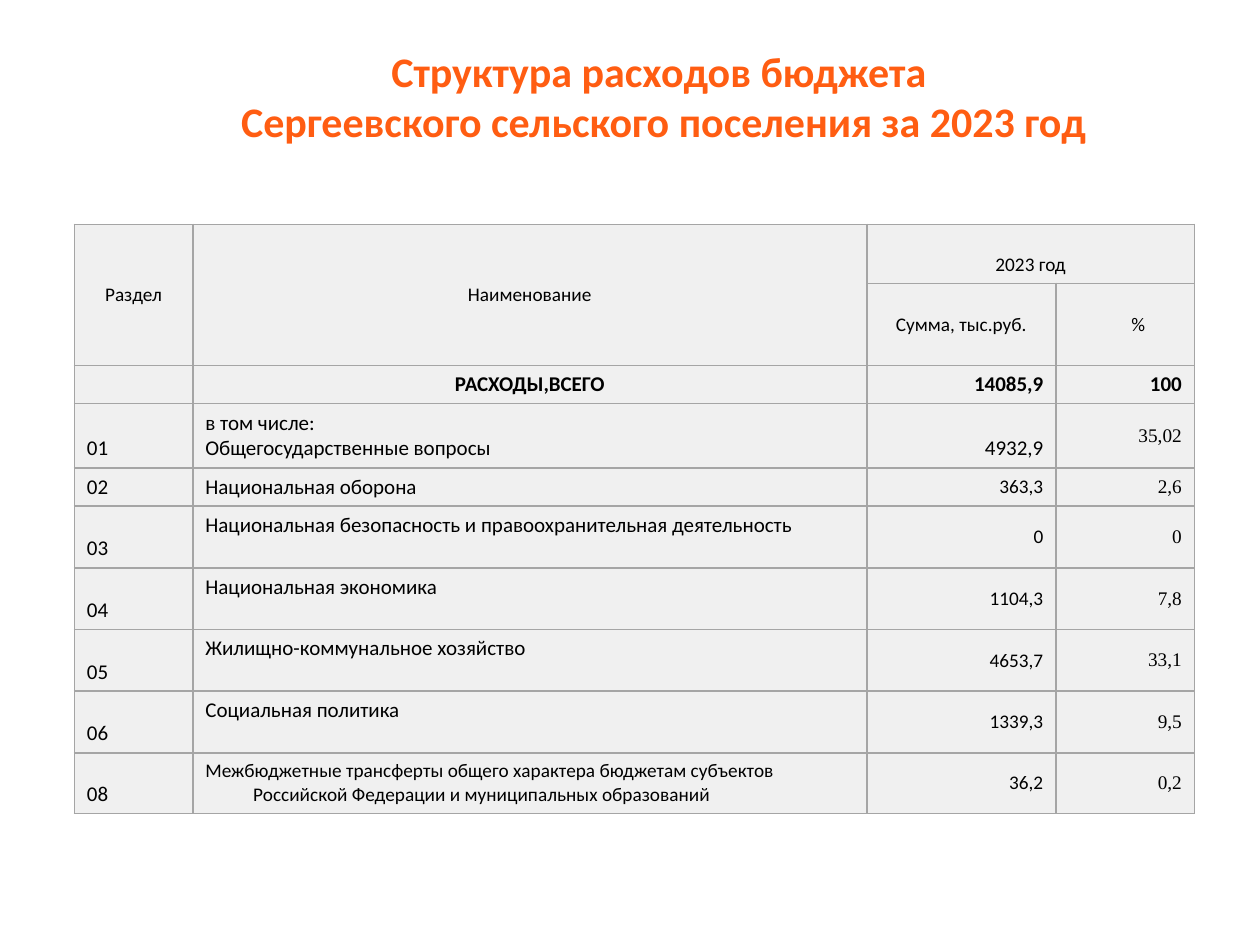
from dataclasses import dataclass

from lxml.etree import SubElement
from pptx import Presentation
from pptx.dml.color import RGBColor
from pptx.enum.text import MSO_ANCHOR as Anchor, PP_ALIGN as Align
from pptx.oxml.ns import qn
from pptx.util import Inches, Pt

COLORS = {"title": "FF5D12", "text": "000000", "fill": "F0F0F0", "border": "A5A5A5"}
COLUMN_WIDTHS = [0.94, 5.35, 1.5, 1.1]
ROW_HEIGHTS = [0.47, 0.65, 0.3, 0.51, 0.3] + [0.49] * 4 + [0.48]
FIRST_SECTION_ROW = 3
HANGING = 0.38


@dataclass
class CellStyle:
    align: Align = Align.LEFT
    anchor: Anchor = Anchor.MIDDLE
    size: int = 12
    bold: bool = False
    font: str = "Calibri"
    margin: float = HANGING


@dataclass
class Section:
    code: str
    name: str
    amount: str
    percent: str
    name_anchor: Anchor = Anchor.TOP
    name_size: int = 12
    amount_size: int = 11
    amount_anchor: Anchor = Anchor.MIDDLE


HEADER = CellStyle(Align.CENTER, size=11)
TOTAL_NAME = CellStyle(Align.CENTER, Anchor.BOTTOM, bold=True)
TOTAL_VALUE = CellStyle(Align.RIGHT, Anchor.BOTTOM, bold=True)
CODE = CellStyle(anchor=Anchor.BOTTOM)
PERCENT = CellStyle(Align.RIGHT, size=11, font="Times New Roman")

HEADER_CELLS = [
    (0, 0, "Раздел", HEADER),
    (0, 1, "Наименование", HEADER),
    (0, 2, "2023 год", CellStyle(Align.CENTER, Anchor.BOTTOM, 11)),
    (1, 2, "Сумма, тыс.руб.", HEADER),
    (1, 3, "%", CellStyle(size=11, margin=0.88)),
    (2, 0, "", CODE),
    (2, 1, "РАСХОДЫ,ВСЕГО", TOTAL_NAME),
    (2, 2, "14085,9", TOTAL_VALUE),
    (2, 3, "100", TOTAL_VALUE),
]
SECTIONS = [
    Section("01", "в том числе:\nОбщегосударственные вопросы", "4932,9", "35,02",
            Anchor.MIDDLE, amount_size=12, amount_anchor=Anchor.BOTTOM),
    Section("02", "Национальная оборона", "363,3", "2,6", Anchor.MIDDLE),
    Section("03", "Национальная безопасность и правоохранительная деятельность", "0", "0"),
    Section("04", "Национальная экономика", "1104,3", "7,8"),
    Section("05", "Жилищно-коммунальное хозяйство", "4653,7", "33,1"),
    Section("06", "Социальная политика", "1339,3", "9,5"),
    Section("08", "Межбюджетные трансферты общего характера бюджетам субъектов "
            "Российской Федерации и муниципальных образований", "36,2", "0,2",
            Anchor.MIDDLE, name_size=11),
]


def format_runs(paragraph, font: str, size: int, bold: bool, color: str) -> None:
    for run in paragraph.runs:
        run.font.name = font
        run.font.size = Pt(size)
        run.font.bold = bold
        run.font.color.rgb = RGBColor.from_string(COLORS[color])


def style_cell_box(cell) -> None:
    """Give the cell its four borders and its fill."""
    properties = cell._tc.get_or_add_tcPr()
    for side in ("a:lnL", "a:lnR", "a:lnT", "a:lnB"):
        line = SubElement(properties, qn(side), w=str(Pt(1)))
        solid = SubElement(line, qn("a:solidFill"))
        SubElement(solid, qn("a:srgbClr"), val=COLORS["border"])
    cell.fill.solid()
    cell.fill.fore_color.rgb = RGBColor.from_string(COLORS["fill"])


def write_cell(cell, text: str, style: CellStyle) -> None:
    cell.text_frame.text = text
    cell.vertical_anchor = style.anchor
    for paragraph in cell.text_frame.paragraphs:
        paragraph.alignment = style.align
        indents = paragraph._p.get_or_add_pPr()
        indents.set("marL", str(Inches(style.margin)))
        indents.set("indent", str(Inches(-HANGING)))
        format_runs(paragraph, style.font, style.size, style.bold, "text")
        SubElement(paragraph._p, qn("a:endParaRPr"), sz=str(style.size * 100))


def add_title(slide) -> None:
    title = slide.shapes.title
    title.left, title.top = Inches(0.98), Inches(0.28)
    title.width, title.height = Inches(8.5), Inches(1.25)
    frame = title.text_frame
    frame.text = "Структура расходов бюджета\v Сергеевского сельского поселения за 2023 год"
    frame.word_wrap = True
    frame.vertical_anchor = Anchor.TOP
    frame.margin_top = Inches(0.08)
    heading = frame.paragraphs[0]
    heading.alignment = Align.CENTER
    format_runs(heading, "Calibri", 24, True, "title")


def add_expense_table(slide) -> None:
    table = slide.shapes.add_table(
        len(ROW_HEIGHTS), len(COLUMN_WIDTHS), Inches(0.59), Inches(1.78),
        Inches(sum(COLUMN_WIDTHS)), Inches(sum(ROW_HEIGHTS))).table
    table.first_row = table.horz_banding = False
    for column, width in zip(table.columns, COLUMN_WIDTHS):
        column.width = Inches(width)
    for row, height in zip(table.rows, ROW_HEIGHTS):
        row.height = Inches(height)
    for cell in table.iter_cells():
        style_cell_box(cell)
    for start, end in (((0, 0), (1, 0)), ((0, 1), (1, 1)), ((0, 2), (0, 3))):
        table.cell(*start).merge(table.cell(*end))

    for row, column, text, style in HEADER_CELLS:
        write_cell(table.cell(row, column), text, style)
    for row, section in enumerate(SECTIONS, FIRST_SECTION_ROW):
        name_style = CellStyle(anchor=section.name_anchor, size=section.name_size)
        amount_style = CellStyle(Align.RIGHT, section.amount_anchor, section.amount_size)
        write_cell(table.cell(row, 0), section.code, CODE)
        write_cell(table.cell(row, 1), section.name, name_style)
        write_cell(table.cell(row, 2), section.amount, amount_style)
        write_cell(table.cell(row, 3), section.percent, PERCENT)


def main() -> None:
    presentation = Presentation()
    presentation.slide_width, presentation.slide_height = Inches(10), Inches(7.5)
    slide = presentation.slides.add_slide(presentation.slide_layouts[5])
    add_title(slide)
    add_expense_table(slide)
    presentation.save("out.pptx")


if __name__ == "__main__":
    main()
